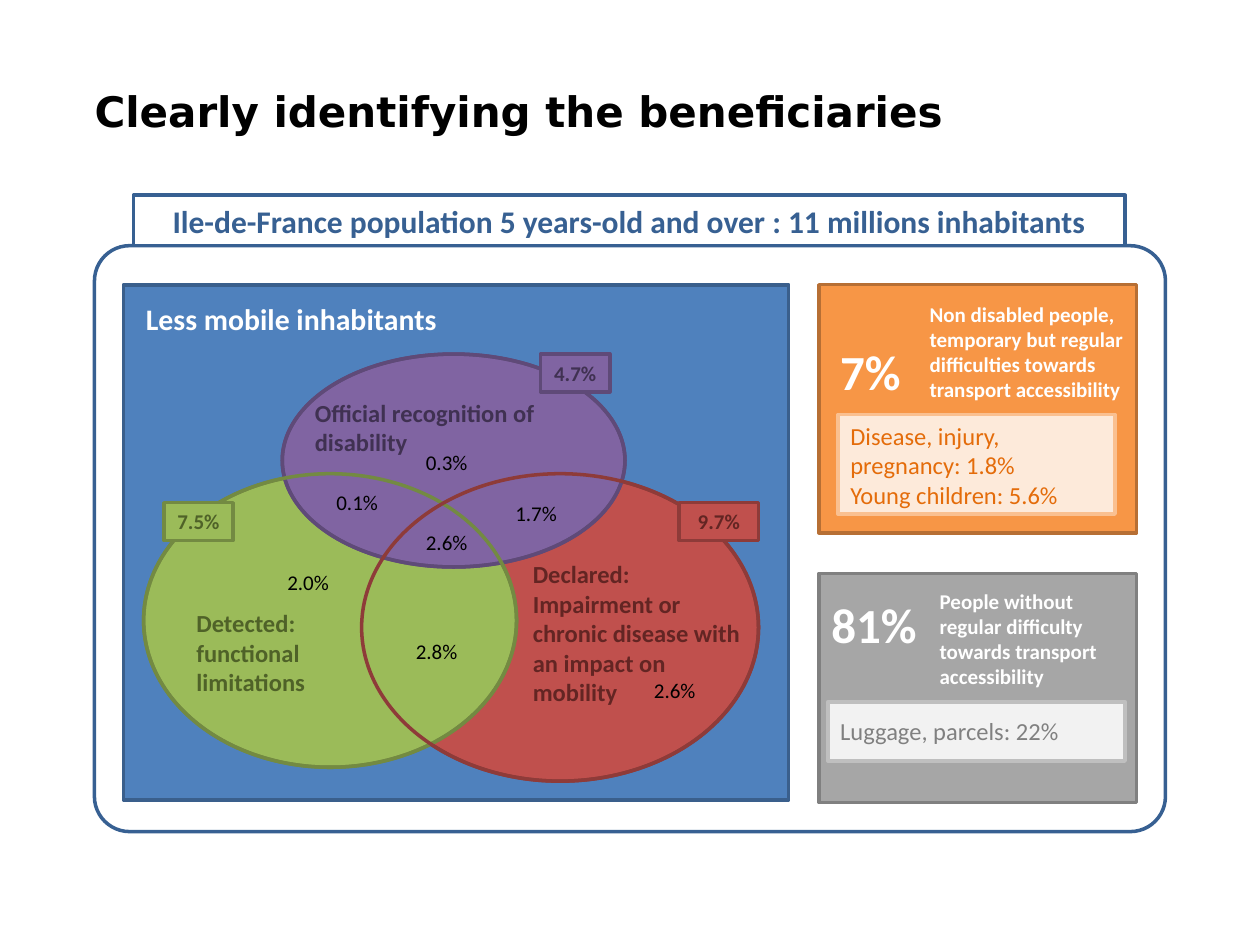
import pptx
import pptx.dml.color
import pptx.enum.shapes
import pptx.enum.text
import pptx.util
from pptx.util import Inches

SHAPES = pptx.enum.shapes.MSO_SHAPE
ALIGN = pptx.enum.text.PP_ALIGN
ANCHOR = pptx.enum.text.MSO_ANCHOR
AUTO_SIZE = pptx.enum.text.MSO_AUTO_SIZE

COLORS = {
    "black": "000000", "white": "FFFFFF", "frame": "376092",
    "blue": "4F81BD", "blue_line": "3A5F8C",
    "red": "C0504D", "red_line": "8E3B39", "red_text": "632523",
    "green": "9BBB59", "green_line": "738A42", "green_text": "4F6228",
    "purple": "8064A2", "purple_line": "5F4A78", "purple_text": "403152",
    "orange": "F79646", "orange_line": "B76F34", "orange_text": "E46C0A",
    "orange_pale": "FDEADA", "orange_pale_line": "FAC090",
    "grey": "A6A6A6", "grey_line": "808080", "grey_text": "808080",
    "grey_pale": "F2F2F2", "grey_pale_line": "BFBFBF",
}


def rgb(name):
    return pptx.dml.color.RGBColor.from_string(COLORS[name])


def within(box, left, top, width, height):
    """Turn a place relative to a box into a place on the slide."""
    return box[0] + Inches(left), box[1] + Inches(top), Inches(width), Inches(height)


def write(holder, text, size=12, color="black", bold=False, align=ALIGN.LEFT,
          font="Calibri", auto_size=AUTO_SIZE.SHAPE_TO_FIT_TEXT):
    """Fill a text holder, one paragraph for each line of text."""
    frame = holder.text_frame
    frame.word_wrap = True
    frame.auto_size = auto_size
    frame.text = text
    for paragraph in frame.paragraphs:
        paragraph.alignment = align
        paragraph.font.name = font
        paragraph.font.size = pptx.util.Pt(size)
        paragraph.font.bold = bold
        paragraph.font.color.rgb = rgb(color)


def add_text(slide, place, text, **style):
    write(slide.shapes.add_textbox(*place), text, **style)


def add_outlined(slide, place, line, fill=None, preset=SHAPES.RECTANGLE):
    shape = slide.shapes.add_shape(preset, *place)
    shape.shadow.inherit = False
    if fill:
        shape.fill.solid()
        shape.fill.fore_color.rgb = rgb(fill)
    else:
        shape.fill.background()
    shape.line.color.rgb = rgb(line)
    shape.line.width = pptx.util.Pt(2)
    return shape


def add_title(slide, box):
    title = slide.shapes.title
    title.left, title.top, title.width, title.height = box
    frame = title.text_frame
    frame.margin_left = frame.margin_top = frame.margin_right = 0
    frame.margin_bottom = Inches(0.08)
    frame.vertical_anchor = ANCHOR.BOTTOM
    write(title, "Clearly identifying the beneficiaries", size=24, bold=True,
          font="DejaVu Sans", auto_size=AUTO_SIZE.NONE)


def add_population_frame(slide, box):
    frame = add_outlined(slide, box, "frame", preset=SHAPES.ROUNDED_RECTANGLE)
    frame.adjustments[0] = 0.06
    banner = add_outlined(slide, within(box, 0.31, -0.4, 7.87, 0.4), "frame", "white")
    write(banner, "Ile-de-France population 5 years-old and over : 11 millions inhabitants",
          size=18, color="frame", bold=True, align=ALIGN.CENTER)


def add_less_mobile_panel(slide, box):
    """Three overlapping groups, their totals and the share of each zone."""
    add_outlined(slide, box, "blue_line", "blue")
    add_text(slide, within(box, 0.08, 0.08, 4.96, 0.39), "Less mobile inhabitants",
             size=17, color="white", bold=True)

    groups = {
        "red": within(box, 1.89, 1.5, 3.15, 2.44),
        "green": within(box, 0.16, 1.5, 2.96, 2.33),
        "purple": within(box, 1.26, 0.55, 2.72, 1.69),
    }
    for color, oval in groups.items():
        add_outlined(slide, oval, color + "_line", color, SHAPES.OVAL)
    # Outlines go over all the fills so that every overlap stays visible.
    for color, oval in reversed(groups.items()):
        add_outlined(slide, oval, color + "_line", preset=SHAPES.OVAL)

    labels = [
        ("purple", "Official recognition of disability", (1.42, 0.85, 2.52, 0.57)),
        ("red", "Declared: Impairment or chronic disease with an impact on mobility",
         (3.15, 2.13, 1.89, 1.28)),
        ("green", "Detected: functional limitations", (0.48, 2.52, 1.5, 0.81)),
    ]
    for color, label, place in labels:
        add_text(slide, within(box, *place), label, size=14,
                 color=color + "_text", bold=True)

    totals = [("purple", "4.7%", 3.31, 0.55, 0.55), ("green", "7.5%", 0.32, 1.73, 0.55),
              ("red", "9.7%", 4.41, 1.73, 0.63)]
    for color, total, left, top, width in totals:
        tag = add_outlined(slide, within(box, left, top, width, 0.3),
                           color + "_line", color)
        write(tag, total, color=color + "_text", bold=True, align=ALIGN.CENTER)

    zone_shares = [("0.3%", 2.21, 1.26), ("2.6%", 2.21, 1.89), ("2.0%", 1.11, 2.21),
                   ("2.6%", 4.02, 3.07), ("2.8%", 2.13, 2.76), ("0.1%", 1.5, 1.58),
                   ("1.7%", 2.92, 1.66)]
    for share, left, top in zone_shares:
        add_text(slide, within(box, left, top, 0.71, 0.3), share, align=ALIGN.CENTER)


def add_share_card(slide, box, color, share, share_at, people, people_at,
                   detail, detail_at, detail_box_at):
    add_outlined(slide, box, color + "_line", color)
    add_text(slide, within(box, *people_at), people, color="white", bold=True)
    add_text(slide, within(box, *share_at), share, size=28, color="white", bold=True)
    add_outlined(slide, within(box, *detail_box_at), color + "_pale_line", color + "_pale")
    add_text(slide, within(box, *detail_at), detail, size=14, color=color + "_text")


def main():
    deck = pptx.Presentation()
    deck.slide_width, deck.slide_height = Inches(10), Inches(7.5)
    slide = deck.slides.add_slide(deck.slide_layouts[5])
    page = (0, 0)

    add_title(slide, within(page, 0.75, 0.42, 8.58, 0.74))
    add_population_frame(slide, within(page, 0.75, 1.95, 8.5, 4.65))
    add_less_mobile_panel(slide, within(page, 0.98, 2.26, 5.28, 4.09))
    add_share_card(
        slide, within(page, 6.5, 2.26, 2.52, 1.97), "orange",
        share="7%", share_at=(0.07, 0.4, 0.94, 0.57),
        people="Non disabled people, temporary but regular difficulties "
               "towards transport accessibility",
        people_at=(0.78, 0.08, 1.81, 0.91),
        detail="Disease, injury, pregnancy: 1.8%\nYoung children: 5.6%",
        detail_at=(0.15, 1.03, 2.28, 0.81), detail_box_at=(0.15, 1.03, 2.2, 0.79))
    add_share_card(
        slide, within(page, 6.5, 4.55, 2.52, 1.82), "grey",
        share="81%", share_at=(0, 0.12, 0.94, 0.57),
        people="People without regular difficulty towards transport accessibility",
        people_at=(0.86, 0.07, 1.73, 0.91),
        detail="Luggage, parcels: 22%",
        detail_at=(0.07, 1.08, 2.36, 0.34), detail_box_at=(0.07, 1.02, 2.36, 0.47))

    deck.save("out.pptx")


if __name__ == "__main__":
    main()
